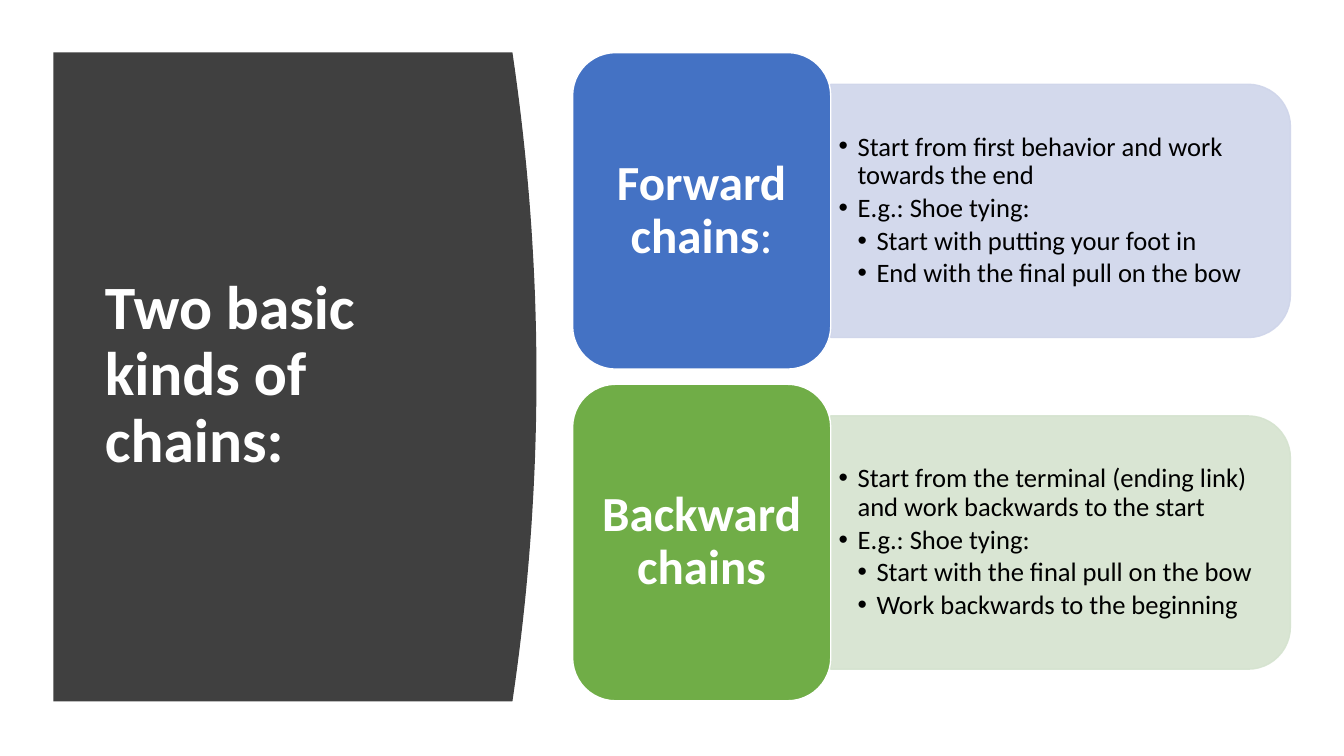
from lxml.etree import SubElement
from pptx import Presentation
from pptx.dml.color import RGBColor
from pptx.enum.shapes import MSO_SHAPE
from pptx.enum.text import MSO_ANCHOR, MSO_AUTO_SIZE, PP_ALIGN
from pptx.oxml.ns import qn
from pptx.util import Pt

CHAINS = [
    ("4472C4", "CFD5EA", ["Forward chains", ":"],
     [(1, "Start from first behavior and work towards the end"),
      (1, "E.g.: Shoe tying:"),
      (2, "Start with putting your foot in"),
      (2, "End with the final pull on the bow")]),
    ("70AD47", "D5E3CF", ["Backward chains"],
     [(1, "Start from the terminal (ending link) and work backwards to the start"),
      (1, "E.g.: Shoe tying:"),
      (2, "Start with the final pull on the bow"),
      (2, "Work backwards to the beginning")]),
]


def colour(value):
    return RGBColor.from_string(value)


class ChainPage:
    font = "Calibri"
    white, black, charcoal = "FFFFFF", "000000", "404040"
    line_spacing = 0.9
    bullet_indent = 13.5

    def __init__(self, page):
        self.page = page

    def paint(self, shape, fill, line=None, opacity=None):
        shape.shadow.inherit = False
        shape.fill.solid()
        shape.fill.fore_color.rgb = colour(fill)
        if line is None:
            shape.line.fill.background()
        else:
            shape.line.color.rgb = colour(line)
            shape.line.width = Pt(1)
        if opacity is not None:
            for tint in shape._element.spPr.iter(qn("a:srgbClr")):
                SubElement(tint, qn("a:alpha"), val=str(opacity * 1000))

    def frame(self, shape, side, edge):
        text = shape.text_frame
        text.word_wrap = True
        text.auto_size = MSO_AUTO_SIZE.NONE
        text.vertical_anchor = MSO_ANCHOR.MIDDLE
        text.margin_left = text.margin_right = Pt(side)
        text.margin_top = text.margin_bottom = Pt(edge)
        return text

    def format(self, para, size, ink, bold=False, after=0, align=PP_ALIGN.LEFT):
        para.alignment = align
        para.line_spacing = self.line_spacing
        para.space_before, para.space_after = Pt(0), Pt(after)
        for span in para.runs:
            span.font.name, span.font.size = self.font, Pt(size)
            span.font.bold = bold
            span.font.color.rgb = colour(ink)

    def place(self, index, left, top, width, height):
        """Move a placeholder and bring it to the front."""
        box = self.page.placeholders[index]
        box.left, box.top, box.width, box.height = map(Pt, (left, top, width, height))
        self.page.shapes._spTree.append(box._element)
        return box

    def curved_panel(self, left, top, width, height, bulge, steps=40):
        """Rectangle whose right side bows outwards as a parabola."""
        side = left + width
        builder = self.page.shapes.build_freeform(Pt(left), Pt(top))
        curve = []
        for step in range(steps + 1):
            offset = 2 * step / steps - 1
            curve.append((Pt(side - bulge * offset ** 2),
                          Pt(top + height * step / steps)))
        builder.add_line_segments(curve + [(Pt(left), Pt(top + height))], close=True)
        self.paint(builder.convert_to_shape(), self.charcoal)

    def title(self, wording, *bounds):
        text = self.frame(self.place(0, *bounds), 7.2, 3.6)
        text.text = wording
        self.format(text.paragraphs[0], 44, self.white, bold=True)

    def backing(self, left, middle, width, height, tint):
        """Panel turned a quarter so that its right corners are round."""
        shape = self.page.shapes.add_shape(
            MSO_SHAPE.ROUND_2_SAME_RECTANGLE,
            Pt(left + (width - height) / 2), Pt(middle - width / 2),
            Pt(height), Pt(width))
        shape.rotation = 90
        self.paint(shape, tint, tint, opacity=90)

    def bullets(self, index, left, middle, width, height, items):
        box = self.place(index, left, middle - height / 2, width, height)
        text = self.frame(box, 5.7, 2.85)
        text.text = "\n".join(wording for level, wording in items)
        for para, (level, wording) in zip(text.paragraphs, items):
            para.level = level
            self.format(para, 19, self.black, after=2.85)
            properties = para._p.get_or_add_pPr()
            properties.set("marL", str(Pt(self.bullet_indent * level)))
            properties.set("indent", str(-Pt(self.bullet_indent)))
            SubElement(properties, qn("a:buFont"), typeface="Arial")
            SubElement(properties, qn("a:buChar"), char="•")

    def card(self, left, top, width, height, fill, wording):
        shape = self.page.shapes.add_shape(
            MSO_SHAPE.ROUNDED_RECTANGLE, Pt(left), Pt(top), Pt(width), Pt(height))
        self.paint(shape, fill, self.white)
        para = self.frame(shape, 10.5, 5.25).paragraphs[0]
        for part in wording:
            para.add_run().text = part
        self.format(para, 35, self.white, bold=True, after=12.25,
                    align=PP_ALIGN.CENTER)
        for span in para.runs[1:]:
            span.font.bold = False


def main():
    deck = Presentation()
    deck.slide_width, deck.slide_height = Pt(960), Pt(540)
    chain_page = ChainPage(deck.slides.add_slide(deck.slide_layouts[3]))

    # Title panel
    chain_page.curved_panel(38.2, 37.4, 345, 463.7, bulge=17.2)
    chain_page.title("Two basic kinds of chains:", 67.7, 79.9, 269.3, 377.3)

    # One row for each kind of chain
    left, top, width, height, gap = 409, 37.6, 184.4, 226.1, 10.8
    for row, (fill, tint, heading, items) in enumerate(CHAINS):
        card_top = top + row * (height + gap)
        middle = card_top + height / 2
        chain_page.backing(left + width, middle, 328.3, 180.9, tint)
        chain_page.bullets(row + 1, left + width, middle, 319.5, 163.2, items)
        chain_page.card(left, card_top, width, height, fill, heading)

    deck.save("out.pptx")


if __name__ == "__main__":
    main()
